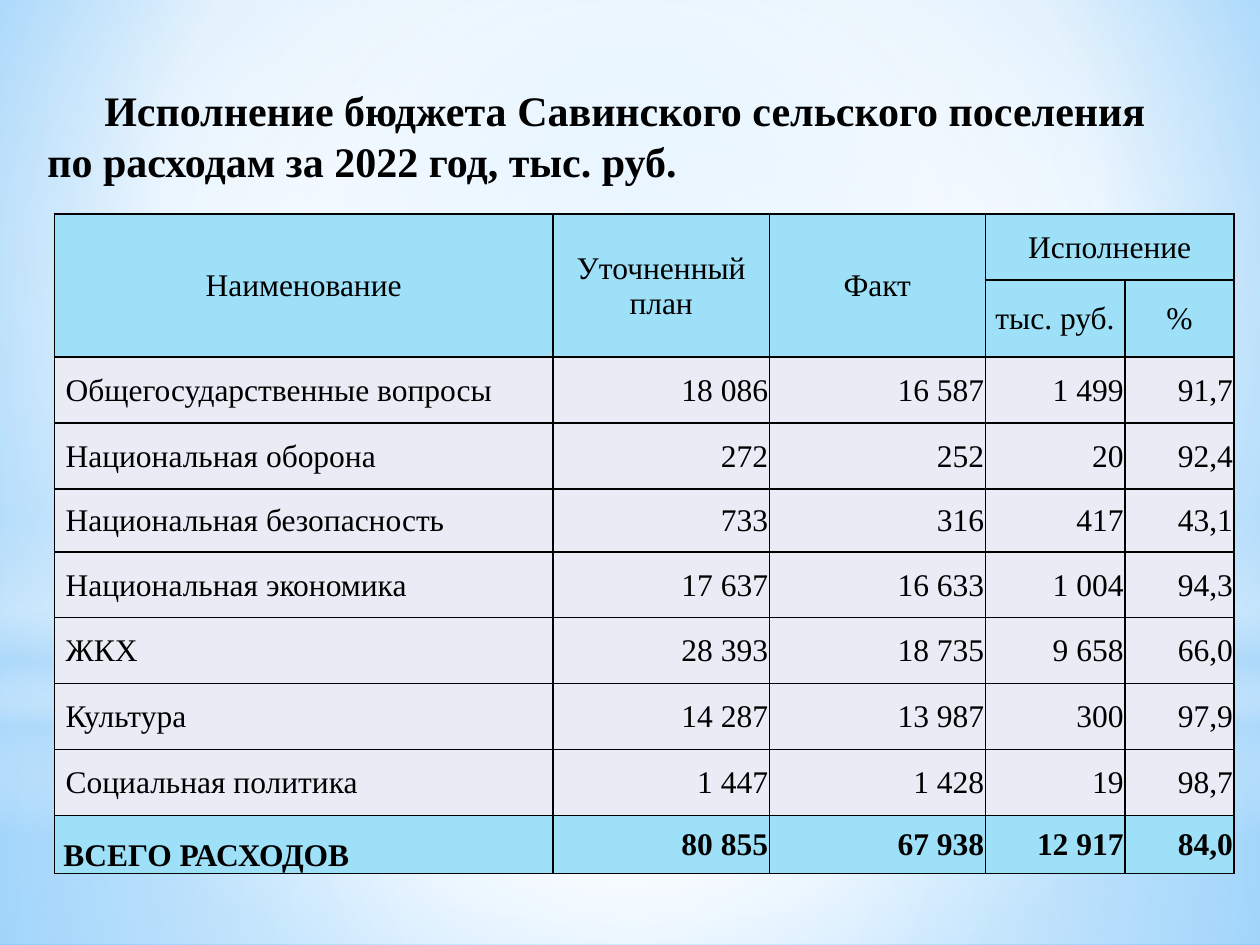
"""Build a one-slide budget execution table on a soft blue background."""
from lxml.etree import SubElement
from pptx import Presentation
from pptx.dml.color import RGBColor
from pptx.enum.shapes import MSO_SHAPE
from pptx.enum.text import MSO_ANCHOR, PP_ALIGN
from pptx.oxml.ns import qn
from pptx.util import Pt

COLORS = {"text": "000000", "head": "9EE0F8", "body": "E9EBF5", "white": "FFFFFF",
          "haze": "B4DCFA", "sky": "9ED5FF", "deep": "5BB9FF"}
FONT = "Times New Roman"
TITLE = "Исполнение бюджета Савинского сельского поселения\vпо расходам за 2022 год, тыс. руб."
ROWS = [
    ("Наименование", "Уточненный план", "Факт", "Исполнение", ""),
    ("", "", "", "тыс. руб.", "%"),
    ("Общегосударственные вопросы", "18 086", "16 587", "1 499", "91,7"),
    ("Национальная оборона", "272", "252", "20", "92,4"),
    ("Национальная безопасность", "733", "316", "417", "43,1"),
    ("Национальная экономика", "17 637", "16 633", "1 004", "94,3"),
    ("ЖКХ", "28 393", "18 735", "9 658", "66,0"),
    ("Культура", "14 287", "13 987", "300", "97,9"),
    ("Социальная политика", "1 447", "1 428", "19", "98,7"),
    ("ВСЕГО РАСХОДОВ", "80 855", "67 938", "12 917", "84,0"),
]
HEAD_ROWS = 2
MERGES = [((0, 0), (1, 0)), ((0, 1), (1, 1)), ((0, 2), (1, 2)), ((0, 3), (0, 4))]
COLUMN_WIDTHS = [285.1, 123.5, 123.5, 79.7, 62.5]
ROW_HEIGHTS = [37.7, 40.6, 37.7, 37.7, 36, 37.7, 37.7, 37.7, 37.7, 33]
CENTER = (50, 50, 50, 50)
BACKGROUND = ([(0, "sky", 100), (60, "white", 100), (100, "deep", 100)], (20, 10, 20, 60))
LAYERS = [
    (MSO_SHAPE.RECTANGLE, 402, 138,
     [(0, "white", 91), (37, "white", 76), (100, "haze", 79)], CENTER),
    (MSO_SHAPE.RECTANGLE, 0, 402,
     [(0, "white", 89), (48, "white", 62), (100, "haze", 79)], CENTER),
    (MSO_SHAPE.RECTANGLE, 297, 180,
     [(0, "white", 0), (29, "white", 30), (45, "haze", 40), (55, "white", 26),
      (65, "haze", 60), (100, "white", 0)], None),
    (MSO_SHAPE.OVAL, 126, 402, [(0, "white", 100), (56, "white", 0)], CENTER),
]


def color(name):
    return RGBColor.from_string(COLORS[name])


def add_gradient(parent, stops, focus):
    """Swap the solid fill of parent for a gradient, radial if focus is given."""
    solid = parent.find(qn("a:solidFill"))
    gradient = SubElement(parent, qn("a:gradFill"), rotWithShape="1")
    parent.replace(solid, gradient)
    stop_list = SubElement(gradient, qn("a:gsLst"))
    for position, name, alpha in stops:
        stop = SubElement(stop_list, qn("a:gs"), pos=str(position * 1000))
        tint = SubElement(stop, qn("a:srgbClr"), val=COLORS[name])
        if alpha < 100:
            SubElement(tint, qn("a:alpha"), val=str(alpha * 1000))
    if focus:
        circle = SubElement(gradient, qn("a:path"), path="circle")
        sides = {side: str(value * 1000) for side, value in zip("ltrb", focus)}
        SubElement(circle, qn("a:fillToRect"), sides)
    else:
        SubElement(gradient, qn("a:lin"), ang="5400000", scaled="0")


def style_paragraph(para, size, bold, align):
    para.alignment = align
    para.font.name = FONT
    para.font.size = Pt(size)
    para.font.bold = bold
    para.font.color.rgb = color("text")


def add_borders(cell):
    properties = cell._tc.get_or_add_tcPr()
    for index, side in enumerate(("lnL", "lnR", "lnT", "lnB")):
        line = properties.makeelement(qn(f"a:{side}"), {"w": str(Pt(1))})
        properties.insert(index, line)
        SubElement(SubElement(line, qn("a:solidFill")), qn("a:srgbClr"), val=COLORS["text"])


def add_backdrop(page, width):
    page.background.fill.solid()
    add_gradient(page._element.find(".//" + qn("p:bgPr")), *BACKGROUND)
    for kind, top, height, stops, focus in LAYERS:
        layer = page.shapes.add_shape(kind, 0, Pt(top), width, Pt(height))
        layer.shadow.inherit = False
        layer.line.fill.background()
        layer.fill.solid()
        add_gradient(layer._element.spPr, stops, focus)


def add_title(page):
    box = page.shapes.add_textbox(Pt(20), Pt(48), Pt(680), Pt(60))
    frame = box.text_frame
    frame.word_wrap = True
    frame.margin_top = frame.margin_bottom = 0
    para = frame.paragraphs[0]
    para.text = TITLE
    para.line_spacing = Pt(29)
    style_paragraph(para, 24, True, PP_ALIGN.LEFT)
    para._p.get_or_add_pPr().set("indent", str(Pt(32.5)))


def add_budget_table(page):
    frame = page.shapes.add_table(len(ROWS), len(COLUMN_WIDTHS), Pt(31), Pt(122.4),
                                  Pt(sum(COLUMN_WIDTHS)), Pt(sum(ROW_HEIGHTS)))
    table = frame.table
    table.first_row = table.horz_banding = False
    for column, width in zip(table.columns, COLUMN_WIDTHS):
        column.width = Pt(width)
    for row, height in zip(table.rows, ROW_HEIGHTS):
        row.height = Pt(height)
    for start, end in MERGES:
        table.cell(*start).merge(table.cell(*end))
    for r, values in enumerate(ROWS):
        is_head, is_total = r < HEAD_ROWS, r == len(ROWS) - 1
        for c, value in enumerate(values):
            is_label = c == 0 and not is_head
            cell = table.cell(r, c)
            cell.margin_left = cell.margin_right = cell.margin_top = Pt(0.7)
            cell.margin_bottom = 0
            if is_label:
                cell.margin_left = Pt(5.2 if is_total else 6.5)
            cell.vertical_anchor = MSO_ANCHOR.BOTTOM if is_label and is_total else MSO_ANCHOR.MIDDLE
            cell.fill.solid()
            cell.fill.fore_color.rgb = color("head" if is_head or is_total else "body")
            add_borders(cell)
            para = cell.text_frame.paragraphs[0]
            para.text = value
            align = PP_ALIGN.CENTER if is_head else PP_ALIGN.LEFT if is_label else PP_ALIGN.RIGHT
            style_paragraph(para, 18, is_total, align)


def main():
    deck = Presentation()
    deck.slide_width, deck.slide_height = Pt(720), Pt(540)
    page = deck.slides.add_slide(deck.slide_layouts[6])
    add_backdrop(page, deck.slide_width)
    add_title(page)
    add_budget_table(page)
    deck.save("out.pptx")


if __name__ == "__main__":
    main()
